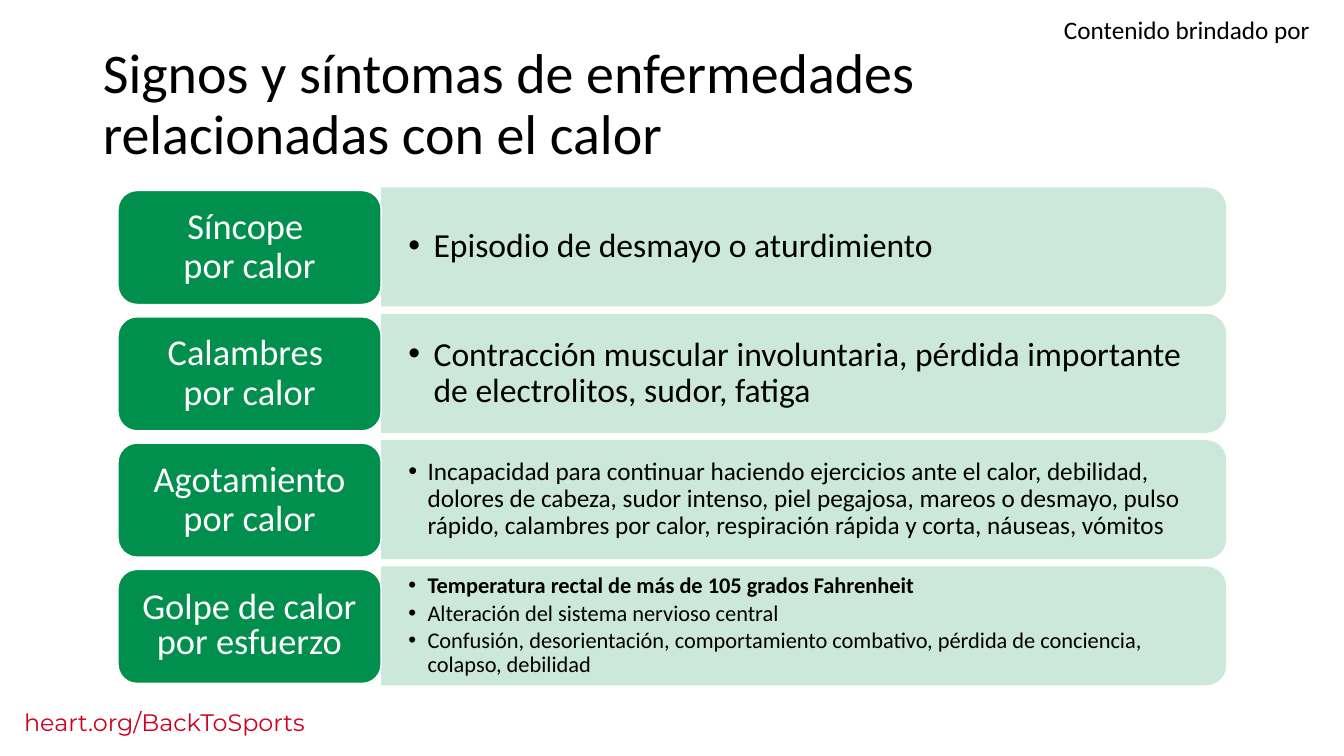
from lxml.etree import SubElement
from pptx import Presentation
from pptx.dml.color import RGBColor as RGB
from pptx.enum.shapes import MSO_SHAPE as SHAPE
from pptx.enum.text import MSO_ANCHOR as ANCHOR, MSO_AUTO_SIZE as AUTO, PP_ALIGN as ALIGN
from pptx.oxml.ns import qn
from pptx.util import Inches, Pt

COLORS = {"green": "008F4C", "red": "D0011E", "black": "000000", "white": "FFFFFF"}
COLS = ROWS = 100
ROW_TOP, ROW_PITCH = 24.8, 16.71

CONDITIONS = [
    ("Síncope \vpor calor", 0.9, 24, 0.25, ["Episodio de desmayo o aturdimiento"]),
    ("Calambres \vpor calor", 0.9, 24, 0.25,
     ["Contracción muscular involuntaria, pérdida importante de electrolitos, sudor, fatiga"]),
    ("Agotamiento por calor", 0.9, 18, 0.19,
     ["Incapacidad para continuar haciendo ejercicios ante el calor, debilidad, "
      "dolores de cabeza, sudor intenso, piel pegajosa, mareos o desmayo, pulso "
      "rápido, calambres por calor, respiración rápida y corta, náuseas, vómitos"]),
    ("Golpe de calor por esfuerzo", 0.8, 16, 0.19,
     ["Temperatura rectal de más de 105 grados Fahrenheit",
      "Alteración del sistema nervioso central",
      "Confusión, desorientación, comportamiento combativo, pérdida de conciencia, "
      "colapso, debilidad"]),
]


def write(p, text, size=18, color="black", font="Calibri", bold=False,
          align=ALIGN.LEFT, spacing=1.0, after=0, indent=None):
    p.text = text
    p.alignment, p.line_spacing = align, spacing
    p.space_before, p.space_after = Pt(0), Pt(after)
    if indent:
        pPr = p._p.get_or_add_pPr()
        pPr.set("marL", str(Inches(indent)))
        pPr.set("indent", str(-Inches(indent)))
        SubElement(pPr, qn("a:buFont"), typeface="Arial")
        SubElement(pPr, qn("a:buChar"), char="•")
    for r in p.runs:
        r.font.name, r.font.size, r.font.bold = font, Pt(size), bold
        r.font.color.rgb = RGB.from_string(COLORS[color])


class HeatSlide:
    def __init__(self, prs):
        self.col, self.row = prs.slide_width / COLS, prs.slide_height / ROWS
        self.s = prs.slides.add_slide(prs.slide_layouts[4])

    def box(self, x, y, w, h):
        return [round(v) for v in (x * self.col, y * self.row, w * self.col, h * self.row)]

    def frame(self, sp, anchor=ANCHOR.TOP, inset=(0.1, 0.05)):
        tf = sp.text_frame
        tf.word_wrap, tf.auto_size, tf.vertical_anchor = True, AUTO.NONE, anchor
        tf.margin_left = tf.margin_right = Inches(inset[0])
        tf.margin_top = tf.margin_bottom = Inches(inset[1])
        return tf

    def place(self, sp, *grid):
        sp.left, sp.top, sp.width, sp.height = self.box(*grid)

    def title(self, text, *grid):
        sp = self.s.shapes.title
        self.place(sp, *grid)
        write(self.frame(sp).paragraphs[0], text, size=40, spacing=0.9)

    def label(self, text, *grid, **style):
        sp = self.s.shapes.add_textbox(*self.box(*grid))
        write(self.frame(sp).paragraphs[0], text, **style)

    def shape(self, kind, box):
        sp = self.s.shapes.add_shape(kind, *box)
        sp.shadow.inherit = False
        sp.fill.solid()
        sp.fill.fore_color.rgb = RGB.from_string(COLORS["green"])
        return sp

    def bar(self, *grid):
        x, y, w, h = self.box(*grid)
        shift = (w - h) // 2
        sp = self.shape(SHAPE.ROUND_2_SAME_RECTANGLE, (x + shift, y - shift, h, w))
        sp.rotation = 90
        sp.line.fill.background()
        SubElement(next(sp.element.iter(qn("a:srgbClr"))), qn("a:alpha"), val="20000")

    def tag(self, text, spacing, *grid):
        sp = self.shape(SHAPE.ROUNDED_RECTANGLE, self.box(*grid))
        sp.line.color.rgb = RGB.from_string(COLORS["white"])
        sp.line.width = Pt(1)
        tf = self.frame(sp, ANCHOR.MIDDLE, (0.16, 0.1))
        write(tf.paragraphs[0], text, size=26, color="white",
              align=ALIGN.CENTER, spacing=spacing)

    def bullets(self, idx, items, size, indent, *grid):
        sp = self.s.placeholders[idx]
        self.place(sp, *grid)
        sp.element.getparent().append(sp.element)
        tf = self.frame(sp, ANCHOR.MIDDLE, (0.27, 0.14))
        for i, item in enumerate(items):
            p = tf.add_paragraph() if i else tf.paragraphs[0]
            write(p, item, size=size, bold=len(items) > 1 and i == 0,
                  spacing=0.9, after=round(size * 0.15, 2), indent=indent)


def main():
    prs = Presentation()
    prs.slide_width, prs.slide_height = Inches(13.33), Inches(7.5)
    slide = HeatSlide(prs)
    slide.label("heart.org/BackToSports", 1.05, 92.93, 32.48, 5.2,
                size=17, color="red", font="Montserrat")
    slide.label("Contenido brindado por", 77.87, 1.2, 20.86, 5.33, align=ALIGN.CENTER)
    slide.title("Signos y síntomas de enfermedades relacionadas con el calor",
                6.9, 5.33, 76.22, 11.07)
    for i, (name, spacing, size, indent, signs) in enumerate(CONDITIONS):
        top = ROW_TOP + i * ROW_PITCH
        slide.bar(28.36, top, 62.87, 15.73)
        slide.bullets(i + 1, signs, size, indent, 28.36, top + 0.8, 62.49, 14.13)
        slide.tag(name, spacing, 8.78, top + 0.4, 19.58, 15.07)
    prs.save("out.pptx")


if __name__ == "__main__":
    main()
